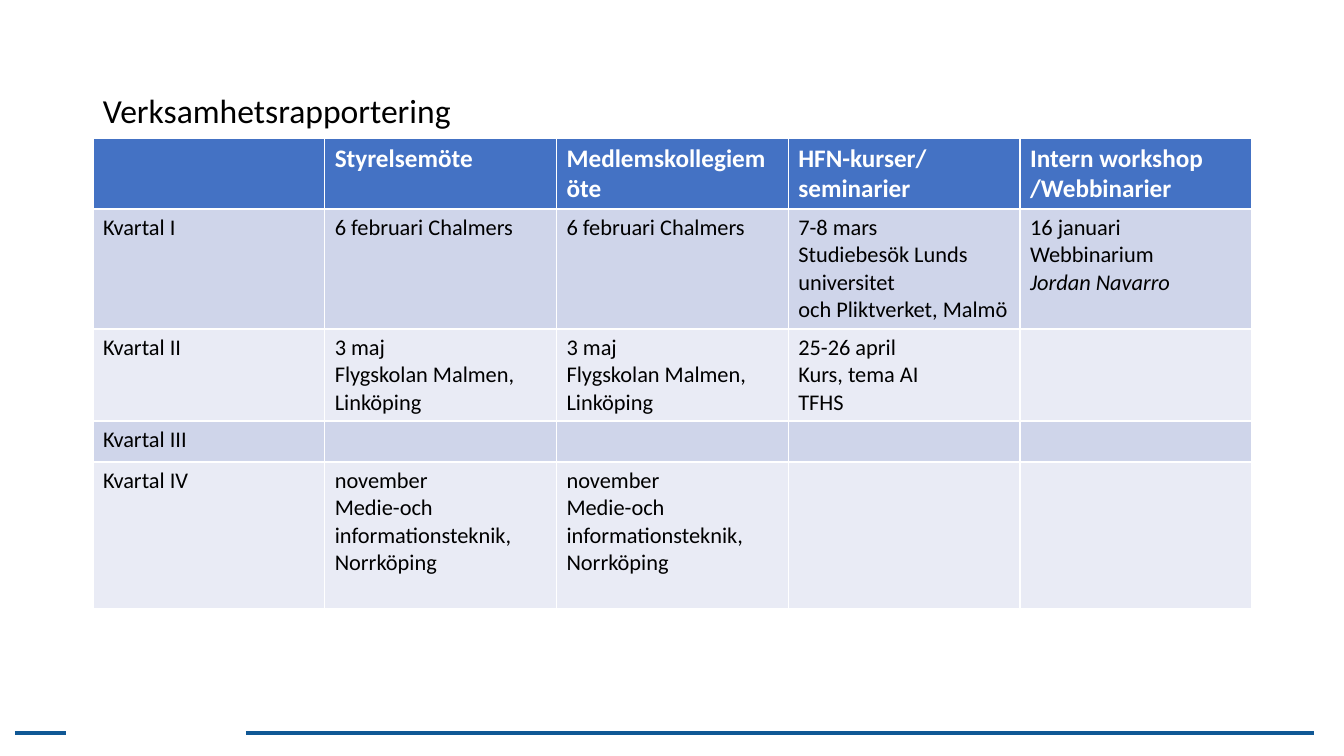
import pptx
import pptx.util
import pptx.dml.color
import pptx.enum.shapes
import pptx.enum.text
import pptx.oxml.ns
import lxml.etree

RGB = pptx.dml.color.RGBColor
WHITE = RGB(0xFF, 0xFF, 0xFF)
BLACK = RGB(0x00, 0x00, 0x00)
BLUE = RGB(0x44, 0x72, 0xC4)
DARK = RGB(0xCF, 0xD5, 0xEA)
LIGHT = RGB(0xE9, 0xEB, 0xF5)
RULE = RGB(0x10, 0x58, 0x95)
FONT = "Calibri"

MAY = "3 maj\nFlygskolan Malmen, Linköping"
NOV = "november\nMedie-och informationsteknik, Norrköping"
FEB = "6 februari Chalmers"
ROWS = [
    (71, ["", "Styrelsemöte", "Medlemskollegiemöte",
          "HFN-kurser/ seminarier", "Intern workshop /Webbinarier"]),
    (120, ["Kvartal I", FEB, FEB,
           "7-8 mars\vStudiebesök Lunds universitet\voch Pliktverket, Malmö",
           "16 januari\vWebbinarium\vJordan Navarro"]),
    (92, ["Kvartal II", MAY, MAY, "25-26 april\vKurs, tema AI\vTFHS", ""]),
    (41, ["Kvartal III", "", "", "", ""]),
    (147, ["Kvartal IV", NOV, NOV, "", ""]),
]


def px(num):
    """Turn pixels into EMU."""
    return pptx.util.Emu(round(num * 914400 / 100.8))


def style(par, size, color, bold=False):
    """Set the font of a paragraph."""
    par.font.name = FONT
    par.font.size = pptx.util.Pt(size)
    par.font.color.rgb = color
    par.font.bold = bold


def add_title(slide, left, top, width, height):
    """Place the heading in its box."""
    frame = slide.shapes.add_textbox(
        px(left), px(top), px(width), px(height)).text_frame
    frame.word_wrap = True
    frame.vertical_anchor = pptx.enum.text.MSO_ANCHOR.MIDDLE
    par = frame.paragraphs[0]
    par.text = "Verksamhetsrapportering"
    par.line_spacing = 0.9
    style(par, 24, BLACK)


def add_plan(slide, left, top, width):
    """Place the table of quarters."""
    count = len(ROWS[0][1])
    total = sum(height for height, _ in ROWS)
    table = slide.shapes.add_table(
        len(ROWS), count, px(left), px(top), px(width), px(total)).table
    for row, (height, texts) in enumerate(ROWS):
        table.rows[row].height = px(height)
        head = row == 0
        for col, text in enumerate(texts):
            cell = table.cell(row, col)
            cell.fill.solid()
            cell.fill.fore_color.rgb = BLUE if head else DARK if row % 2 else LIGHT
            if not text:
                continue
            cell.text_frame.text = text
            for par in cell.text_frame.paragraphs:
                style(par, 18 if head else 16, WHITE if head else BLACK, head)
    guest = table.cell(1, count - 1).text_frame.paragraphs[0].runs[-1]
    guest.font.italic = True


def add_foot(slide, left, top, width):
    """Draw the two parts of the bottom rule."""
    for start, end in ((0, 51), (231, width)):
        line = slide.shapes.add_connector(
            pptx.enum.shapes.MSO_CONNECTOR.STRAIGHT,
            px(left + start), px(top), px(left + end), px(top))
        line.line.color.rgb = RULE
        line.line.width = pptx.util.Pt(2.25)
        lxml.etree.SubElement(
            line._element.spPr, pptx.oxml.ns.qn("a:effectLst"))


def main():
    """Build and save the slide."""
    deck = pptx.Presentation()
    deck.slide_width, deck.slide_height = px(1344), px(756)
    slide = deck.slides.add_slide(deck.slide_layouts[6])
    add_foot(slide, 15, 733, 1299)
    add_title(slide, 93, 40, 1159, 146)
    add_plan(slide, 93, 138, 1159)
    deck.save("out.pptx")


if __name__ == "__main__":
    main()
